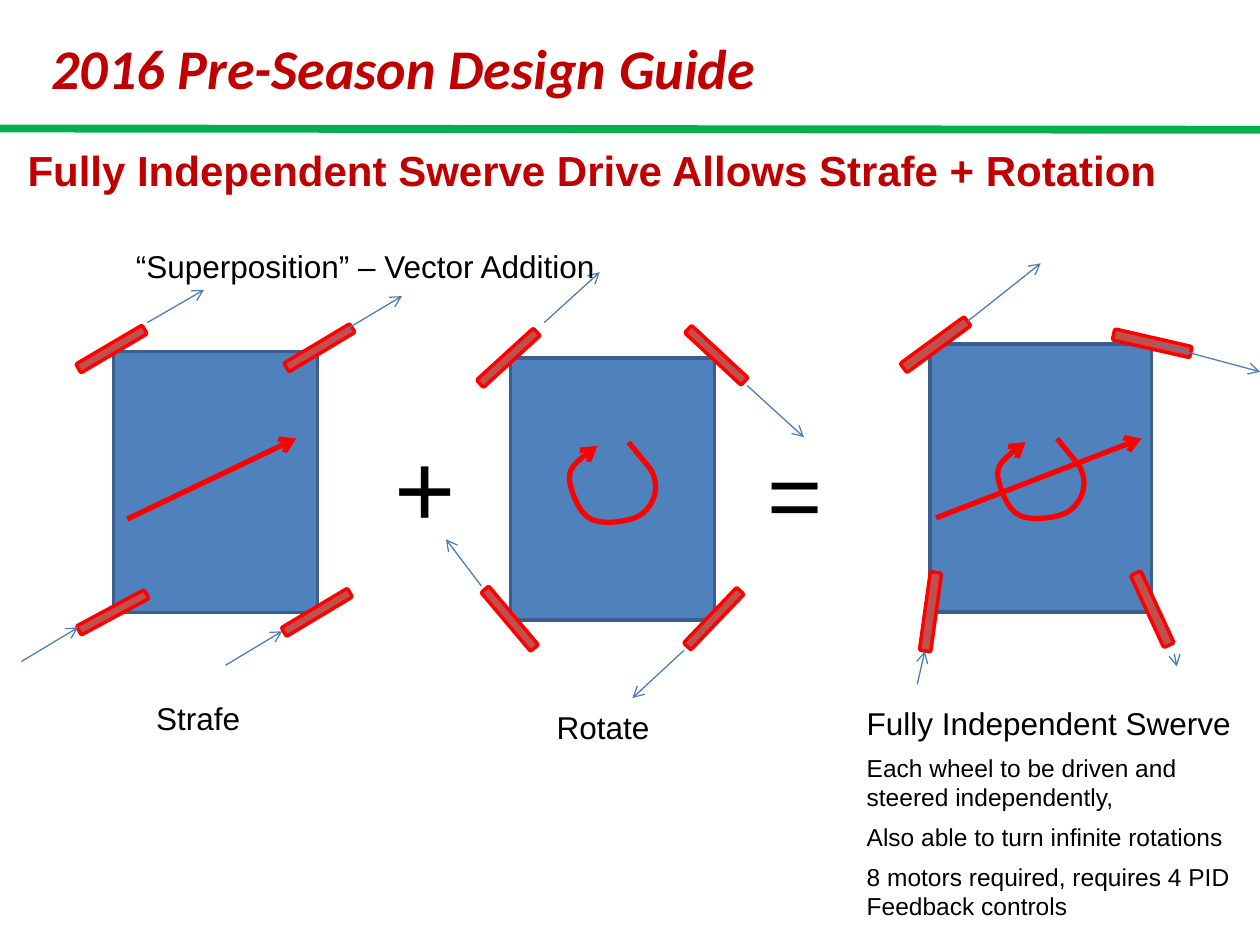
import pptx
import pptx.dml.color
import pptx.enum.shapes
import pptx.enum.text
import pptx.oxml.ns
import pptx.util
from lxml import etree

RED, DARK_RED, GREEN, BLACK = "FF0000", "C00000", "00B050", "000000"
CHASSIS, CHASSIS_EDGE, WHEEL, VECTOR = "4F81BD", "3A5F8C", "C0504D", "4B7EBC"
BEGIN, END = "begin", "end"

# Each drive in inches: chassis box, wheel size, strafe vector, rotation loop origin,
# and wheels as (left, top, angle, vector start, vector end, joined vector end)
DRIVES = [
    dict(chassis=(7.38, 2.73, 1.76, 2.13), wheel=(0.63, 0.09),
         strafe=((7.43, 4.11), (9.06, 3.48)), loop=(7.92, 3.48),
         wheels=[(7.07, 4.81, 277.9, (7.28, 5.43), (7.34, 5.17), END),
                 (8.83, 4.79, 245.2, (9.32, 5.19), (9.34, 5.29), None),
                 (7.11, 2.69, 323.8, (7.68, 2.55), (8.26, 2.09), BEGIN),
                 (8.83, 2.68, 12.9, (9.18, 2.73), (10, 2.95), None)]),
    dict(chassis=(0.9, 2.79, 1.62, 2.07), wheel=(0.61, 0.08),
         strafe=((1.01, 4.12), (2.35, 3.48)), loop=None,
         wheels=[(0.58, 2.73, 329.5, (1.17, 2.56), (1.62, 2.3), None),
                 (2.21, 4.82, 329.1, (1.79, 5.28), (2.24, 5.01), END),
                 (0.59, 4.82, 331.7, (0.17, 5.25), (0.62, 4.98), END),
                 (2.23, 2.72, 329.1, (2.74, 2.62), (3.19, 2.35), None)]),
    dict(chassis=(4.05, 2.84, 1.62, 2.08), wheel=(0.61, 0.08),
         strafe=None, loop=(4.52, 3.51),
         wheels=[(3.73, 2.8, 317.6, (4.32, 2.56), (4.76, 2.16), None),
                 (5.36, 4.87, 313.7, (5.43, 5.16), (5.02, 5.54), None),
                 (3.74, 4.87, 229.8, (3.82, 4.65), (3.54, 4.28), None),
                 (5.38, 2.78, 42.9, (5.93, 3.06), (6.38, 3.47), None)]),
]

# Start point, then three points for each Bezier curve, from the loop origin
LOOP = [(0.22, 0.03),
        (0.1, 0.11), (-0.01, 0.21), (0, 0.31),
        (0.02, 0.41), (0.08, 0.57), (0.17, 0.61),
        (0.27, 0.66), (0.48, 0.63), (0.56, 0.58),
        (0.64, 0.53), (0.7, 0.42), (0.68, 0.31),
        (0.65, 0.2), (0.66, 0.24), (0.47, 0)]

# Lines of text with their sizes
SWERVE_NOTES = [("Fully Independent Swerve", 18),
                ("Each wheel to be driven and steered independently,", 14),
                ("Also able to turn infinite rotations", 14),
                ("8 motors required, requires 4 PID Feedback controls", 14)]
LABELS = [("=", (5.99, 3.4, 0.64, 1.01), 54),
          ("+", (3.03, 3.3, 0.69, 1.11), 60),
          ("Strafe", (1.14, 5.5, 0.88, 0.4), 18),
          ("Rotate", (4.32, 5.57, 0.95, 0.4), 18)]

deck = pptx.Presentation()


def inches(*values):
    return [pptx.util.Cm(value * 2.54) for value in values]


deck.slide_width, deck.slide_height = inches(10, 7.5)
slide = deck.slides.add_slide(deck.slide_layouts[6])


def rgb(color):
    return pptx.dml.color.RGBColor.from_string(color)


def add_text(lines, box, size=18, font="Arial", color=BLACK, bold=False,
             italic=False, wrap=True, middle=False, space=0):
    """lines is a string, or a list of (text, size) paragraphs."""
    frame = slide.shapes.add_textbox(*inches(*box)).text_frame
    frame.word_wrap = wrap
    if middle:
        frame.vertical_anchor = pptx.enum.text.MSO_ANCHOR.MIDDLE
    if isinstance(lines, str):
        lines = [(lines, size)]
    for number, (text, points) in enumerate(lines):
        paragraph = frame.add_paragraph() if number else frame.paragraphs[0]
        if number:
            paragraph.space_before = pptx.util.Pt(space)
        run = paragraph.add_run()
        run.text = text
        run.font.name, run.font.size = font, pptx.util.Pt(points)
        run.font.bold, run.font.italic = bold, italic
        run.font.color.rgb = rgb(color)


def set_line(shape, color, width, arrow=None):
    shape.line.color.rgb = rgb(color)
    shape.line.width = pptx.util.Pt(width)
    if arrow:
        outline = shape.line._get_or_add_ln()
        etree.SubElement(outline, pptx.oxml.ns.qn("a:" + arrow), type="arrow")


def add_block(preset, box, fill, edge, angle=0):
    block = slide.shapes.add_shape(preset, *inches(*box))
    block.shadow.inherit = False
    block.fill.solid()
    block.fill.fore_color.rgb = rgb(fill)
    set_line(block, edge, 2)
    block.rotation = angle
    return block


def add_line(start, end, color, width, arrow="tailEnd", wheel=None, join=None):
    ends = inches(*start, *end)
    line = slide.shapes.add_connector(pptx.enum.shapes.MSO_CONNECTOR.STRAIGHT, *ends)
    set_line(line, color, width, arrow)
    etree.SubElement(line._element.spPr, pptx.oxml.ns.qn("a:effectLst"))
    if join == BEGIN:
        line.begin_connect(wheel, 3)
    elif join == END:
        line.end_connect(wheel, 1)
    # Joining ignores the wheel's rotation, so place the ends again
    line.begin_x, line.begin_y, line.end_x, line.end_y = ends


def add_loop(left, top):
    points = [inches(left + x, top + y) for x, y in LOOP]
    builder = slide.shapes.build_freeform(*points[0])
    builder.add_line_segments(points[1:], close=False)
    loop = builder.convert_to_shape()
    loop.shadow.inherit = False
    loop.fill.background()
    set_line(loop, RED, 3, "headEnd")
    # Turn every three segments into one cubic curve
    segments = list(loop._element.iter(pptx.oxml.ns.qn("a:lnTo")))
    for first in range(0, len(segments), 3):
        curve = etree.Element(pptx.oxml.ns.qn("a:cubicBezTo"))
        segments[first].addprevious(curve)
        for segment in segments[first:first + 3]:
            curve.append(segment[0])
            segment.getparent().remove(segment)


# Header
add_line((0, 1.02), (10, 1.03), GREEN, 4.5, arrow=None)
add_text("2016 Pre-Season Design Guide", (0.31, 0.22, 5.94, 0.64), size=32,
         font="Calibri", color=DARK_RED, bold=True, italic=True, wrap=False)
add_text("Fully Independent Swerve Drive Allows Strafe + Rotation",
         (0.12, 1.08, 9.82, 0.53), size=24, color=DARK_RED, bold=True, middle=True)

# Drives, with the wheel vectors above them all
wheel_vectors = []
for drive in DRIVES:
    add_block(pptx.enum.shapes.MSO_SHAPE.RECTANGLE, drive["chassis"], CHASSIS, CHASSIS_EDGE)
    if drive["strafe"]:
        add_line(*drive["strafe"], RED, 3)
    for left, top, angle, start, end, join in drive["wheels"]:
        wheel = add_block(pptx.enum.shapes.MSO_SHAPE.ROUNDED_RECTANGLE,
                          (left, top, *drive["wheel"]), WHEEL, RED, angle)
        wheel_vectors.append((start, end, wheel, join))
    if drive["loop"]:
        add_loop(*drive["loop"])
for start, end, wheel, join in wheel_vectors:
    add_line(start, end, VECTOR, 0.75, wheel=wheel, join=join)

# Labels and notes
for label, box, size in LABELS:
    add_text(label, box, size=size, wrap=False)
add_text("“Superposition” – Vector Addition", (0.98, 1.91, 4.11, 0.4))
add_text(SWERVE_NOTES, (6.78, 5.54, 3.22, 2.15), space=6)

deck.save("out.pptx")
